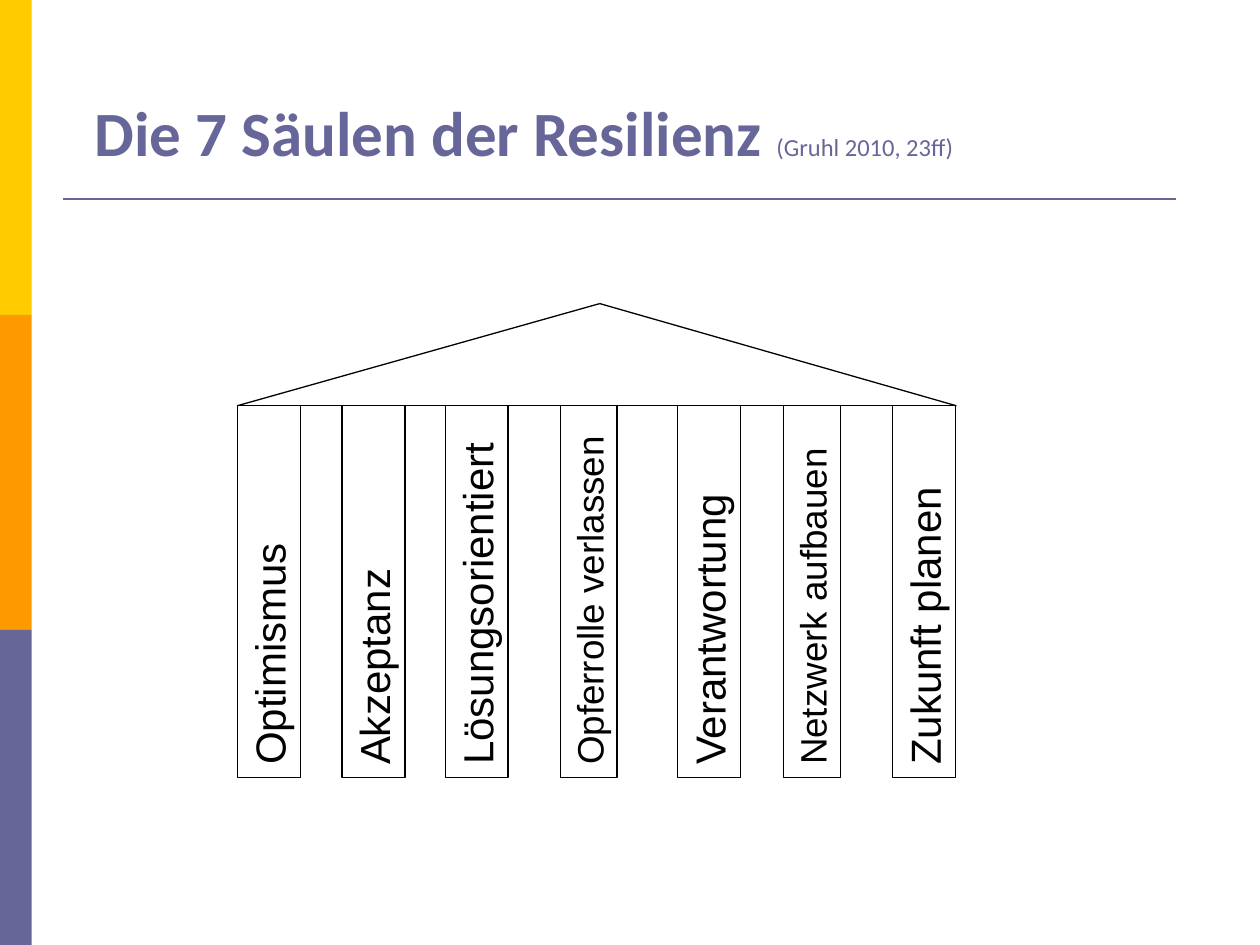
import pptx
import pptx.util
import pptx.dml.color
import pptx.enum.shapes
import pptx.enum.text
import pptx.oxml.ns
import lxml.etree

Cm, Pt = pptx.util.Cm, pptx.util.Pt

COLOURS = {
    "yellow": "FFCC00",
    "orange": "FF9900",
    "violet": "666699",
    "black": "000000",
}

# Pillar text, distance of its centre from the temple's left edge (cm), font size
PILLARS = [
    ("Optimismus", 0.64, 24),
    ("Akzeptanz", 2.75, 24),
    ("Lösungsorientiert", 4.83, 24),
    ("Opferrolle verlassen", 7.09, 21),
    ("Verantwortung", 9.51, 24),
    ("Netzwerk aufbauen", 11.59, 21),
    ("Zukunft planen", 13.85, 24),
]
PILLAR_WIDTHS = {24: 1.27, 21: 1.14}


def rgb(name):
    return pptx.dml.color.RGBColor.from_string(COLOURS[name])


def format_run(run, font, size, colour, bold=False):
    run.font.name = font
    run.font.size = Pt(size)
    run.font.bold = bold
    run.font.color.rgb = rgb(colour)


def add_rectangle(slide, left, top, width, height):
    rectangle = slide.shapes.add_shape(
        pptx.enum.shapes.MSO_SHAPE.RECTANGLE, Cm(left), Cm(top), Cm(width), Cm(height))
    rectangle.shadow.inherit = False
    return rectangle


def add_line(slide, start, end, colour, width):
    line = slide.shapes.add_connector(
        pptx.enum.shapes.MSO_CONNECTOR.STRAIGHT, *(Cm(value) for value in start + end))
    line.line.color.rgb = rgb(colour)
    line.line.width = Pt(width)
    properties = line._element.spPr
    lxml.etree.SubElement(properties, pptx.oxml.ns.qn("a:effectLst"))


def add_side_bar(slide, left, top, width, height):
    bands = ("yellow", "orange", "violet")
    band_height = height / len(bands)
    for index, colour in enumerate(bands):
        band = add_rectangle(slide, left, top + index * band_height, width, band_height)
        band.fill.solid()
        band.fill.fore_color.rgb = rgb(colour)
        band.line.fill.background()


def add_heading(slide, left, top, width, height):
    heading = slide.shapes.title
    heading.left, heading.top = Cm(left), Cm(top)
    heading.width, heading.height = Cm(width), Cm(height)
    frame = heading.text_frame
    frame.auto_size = pptx.enum.text.MSO_AUTO_SIZE.NONE
    frame.vertical_anchor = pptx.enum.text.MSO_ANCHOR.BOTTOM
    paragraph = frame.paragraphs[0]
    paragraph.alignment = pptx.enum.text.PP_ALIGN.LEFT
    for text, size, bold in (("Die 7 Säulen der Resilienz ", 36, True),
                             ("(Gruhl 2010, 23ff)", 14, False)):
        run = paragraph.add_run()
        run.text = text
        format_run(run, "Calibri", size, "violet", bold)

    # Rule below the heading
    rule_left, rule_top = left - 0.38, top + 2.49
    add_line(slide, (rule_left, rule_top), (rule_left + 22.43, rule_top), "violet", 1.5)


def add_pillar(slide, text, centre_x, top, height, size):
    width = PILLAR_WIDTHS[size]
    # Lying rectangle, turned upright around its centre
    pillar = add_rectangle(
        slide, centre_x - height / 2, top + (height - width) / 2, height, width)
    pillar.rotation = 270
    pillar.fill.background()
    pillar.line.color.rgb = rgb("black")
    pillar.line.width = Pt(0.75)
    frame = pillar.text_frame
    frame.text = text
    frame.word_wrap = True
    frame.auto_size = pptx.enum.text.MSO_AUTO_SIZE.SHAPE_TO_FIT_TEXT
    frame.vertical_anchor = pptx.enum.text.MSO_ANCHOR.TOP
    paragraph = frame.paragraphs[0]
    paragraph.alignment = pptx.enum.text.PP_ALIGN.LEFT
    format_run(paragraph.runs[0], "Arial", size, "black")


def add_temple(slide, left, top, width, height):
    roof_height = 2.06
    eaves = top + roof_height
    for text, offset, size in PILLARS:
        add_pillar(slide, text, left + offset, eaves, height - roof_height, size)

    # Roof
    left_corner, right_corner = (left, eaves), (left + width, eaves)
    ridge = (left + 7.31, top)
    for start, end in ((left_corner, ridge), (ridge, right_corner),
                       (left_corner, right_corner)):
        add_line(slide, start, end, "black", 0.75)


def main():
    presentation = pptx.Presentation()
    presentation.slide_width, presentation.slide_height = Cm(25.4), Cm(19.05)
    slide = presentation.slides.add_slide(presentation.slide_layouts[5])
    add_side_bar(slide, 0, 0, 0.64, 19.05)
    add_heading(slide, 1.65, 1.52, 20.85, 2.01)
    add_temple(slide, 4.78, 6.12, 14.5, 9.55)
    presentation.save("out.pptx")


if __name__ == "__main__":
    main()
